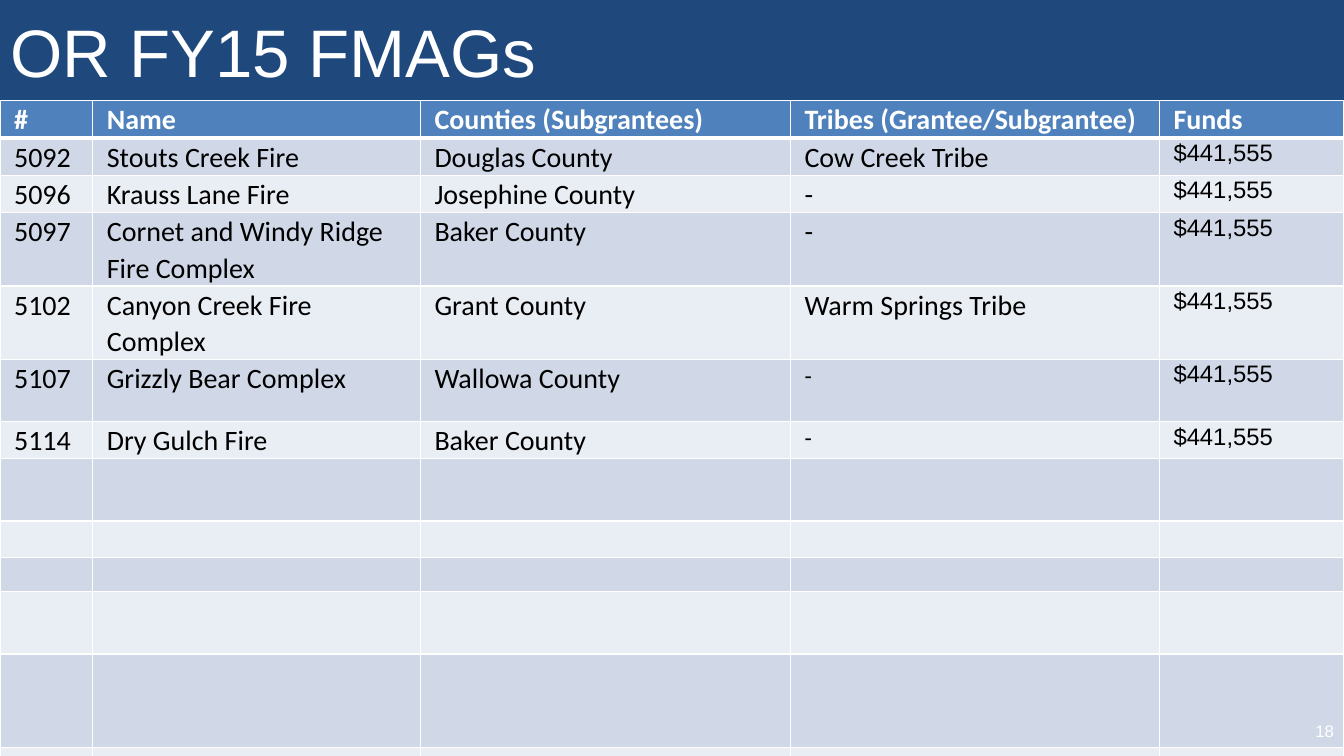
from dataclasses import dataclass

from lxml import etree
from pptx import Presentation
from pptx.dml.color import RGBColor
from pptx.enum.shapes import MSO_SHAPE
from pptx.enum.text import MSO_ANCHOR, PP_ALIGN
from pptx.oxml.ns import qn
from pptx.util import Inches, Pt

RECT = MSO_SHAPE.RECTANGLE
MIDDLE = MSO_ANCHOR.MIDDLE
LEFT, RIGHT = PP_ALIGN.LEFT, PP_ALIGN.RIGHT

NAVY = RGBColor(0x1F, 0x49, 0x7D)
BLUE = RGBColor(0x4F, 0x81, 0xBD)
BAND_DARK = RGBColor(0xD0, 0xD8, 0xE8)
BAND_LIGHT = RGBColor(0xE9, 0xED, 0xF4)
WHITE = RGBColor(0xFF, 0xFF, 0xFF)
BLACK = RGBColor(0, 0, 0)

SLIDE_W, SLIDE_H = Inches(13.33), Inches(7.5)
BAR_H = Inches(1)
COLUMNS = (0.92, 3.25, 3.67, 3.66, 1.83)
ROWS = (0.37, 0.37, 0.37, 0.34, 0.34, 0.62, 0.34, 0.62, 0.36, 0.34, 0.62, 0.93, 0.34)
HEADINGS = ("#", "Name", "Counties (Subgrantees)", "Tribes (Grantee/Subgrantee)", "Funds")

HEADING = {"name": "Calibri", "size": Pt(20), "bold": True}
BODY = {"name": "Calibri", "size": Pt(20), "bold": False}
SMALL = {"name": "Calibri", "size": Pt(17), "bold": False}
MONEY = {"name": "Arial", "size": Pt(17), "bold": False}
TITLE = {"name": "Arial", "size": Pt(48), "bold": False}
NUMBER = {"name": "Arial", "size": Pt(12), "bold": False}


@dataclass(frozen=True)
class Fire:
    number: str
    name: str
    county: str
    tribe: str = "-"
    funds: str = "$441,555"
    tribe_font: dict = None

    def cells(self) -> list:
        tribe_font = self.tribe_font or BODY
        return [(self.number, BODY), (self.name, BODY), (self.county, BODY),
                (self.tribe, tribe_font), (self.funds, MONEY)]


FIRES = (
    Fire("5092", "Stouts Creek Fire", "Douglas County", "Cow Creek Tribe"),
    Fire("5096", "Krauss Lane Fire", "Josephine County"),
    Fire("5097", "Cornet and Windy Ridge Fire Complex", "Baker County"),
    Fire("5102", "Canyon Creek Fire Complex", "Grant County", "Warm Springs Tribe"),
    Fire("5107", "Grizzly Bear Complex", "Wallowa County", tribe_font=SMALL),
    Fire("5114", "Dry Gulch Fire", "Baker County", tribe_font=SMALL),
)


def write(tf, text: str, font: dict, color: RGBColor, align=LEFT):
    p = tf.paragraphs[0]
    p.alignment = align
    r = p.add_run()
    r.text = text
    for key, value in font.items():
        setattr(r.font, key, value)
    r.font.color.rgb = color
    return p


def add_borders(cell, bottom: float) -> None:
    """Draw white cell edges, ahead of the fill as the schema demands."""
    props = cell._tc.get_or_add_tcPr()
    edges = {"a:lnL": 1, "a:lnR": 1, "a:lnT": 1, "a:lnB": bottom}
    for i, (tag, width) in enumerate(edges.items()):
        ln = etree.Element(qn(tag), w=str(Pt(width)))
        fill = etree.SubElement(ln, qn("a:solidFill"))
        etree.SubElement(fill, qn("a:srgbClr"), val=str(WHITE))
        props.insert(i, ln)


def format_cell(cell, fill: RGBColor, bottom: float = 1) -> None:
    cell.margin_left = cell.margin_right = Inches(0.14)
    cell.margin_top = cell.margin_bottom = 0
    cell.fill.solid()
    cell.fill.fore_color.rgb = fill
    add_borders(cell, bottom)


def add_title(s) -> None:
    bar = s.shapes.add_shape(RECT, 0, 0, SLIDE_W, BAR_H)
    bar.shadow.inherit = False
    bar.fill.solid()
    bar.fill.fore_color.rgb = NAVY
    bar.line.fill.background()
    title = s.shapes.title
    title._element.addprevious(bar._element)
    title.left, title.top, title.width, title.height = 0, 0, Inches(11.51), BAR_H
    title.text_frame.vertical_anchor = MIDDLE
    write(title.text_frame, "OR FY15 FMAGs", TITLE, WHITE)


def add_fire_table(s) -> None:
    frame = s.shapes.add_table(len(ROWS), len(COLUMNS), 0, BAR_H,
                               Inches(sum(COLUMNS)), Inches(sum(ROWS)))
    table = frame.table
    for column, width in zip(table.columns, COLUMNS):
        column.width = Inches(width)
    for row, height in zip(table.rows, ROWS):
        row.height = Inches(height)

    content = [[(text, HEADING) for text in HEADINGS]] + [fire.cells() for fire in FIRES]
    for i, row in enumerate(table.rows):
        fill = BLUE if i == 0 else BAND_DARK if i % 2 else BAND_LIGHT
        for cell in row.cells:
            format_cell(cell, fill, bottom=1 if i else 3)
        if i < len(content):
            for cell, (text, font) in zip(row.cells, content[i]):
                p = write(cell.text_frame, text, font, BLACK if i else WHITE)
                p.line_spacing = 1.07


def add_slide_number(s) -> None:
    width, height = Inches(3.11), Inches(0.5)
    box = s.shapes.add_textbox(SLIDE_W - width, SLIDE_H - height, width, height)
    tf = box.text_frame
    tf.word_wrap = True
    tf.vertical_anchor = MIDDLE
    write(tf, "18", NUMBER, WHITE, RIGHT)


def main() -> None:
    prs = Presentation()
    prs.slide_width, prs.slide_height = SLIDE_W, SLIDE_H
    s = prs.slides.add_slide(prs.slide_layouts[5])
    add_title(s)
    add_fire_table(s)
    add_slide_number(s)
    prs.save("out.pptx")


if __name__ == "__main__":
    main()
